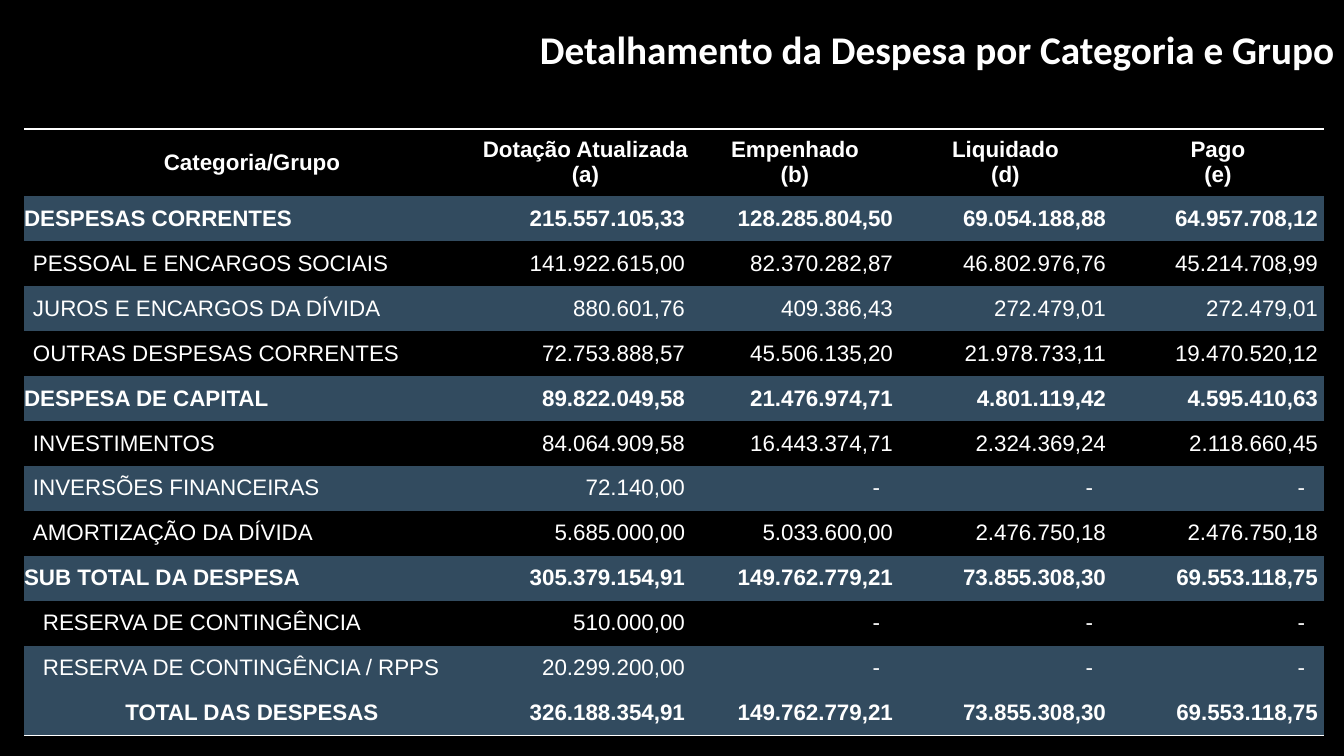
from lxml import etree
from pptx import Presentation
from pptx.dml.color import RGBColor
from pptx.enum.text import MSO_ANCHOR as Anchor, PP_ALIGN as Align
from pptx.oxml.ns import qn
from pptx.util import Pt

PX = 914400 / 100.8
BLACK = RGBColor(0x00, 0x00, 0x00)
WHITE = RGBColor(0xFF, 0xFF, 0xFF)
SLATE = RGBColor(0x32, 0x4B, 0x5F)
NO_GRID_STYLE = "{2D5ABB26-0587-4C30-8999-92F81FD0307C}"

COLUMN_WIDTHS = [456, 211, 208, 213, 212]
HEADER_HEIGHT, ROW_HEIGHT = 67, 45
NUMBER_MARGIN, DASH_MARGIN = 6, 19
HEADERS = ["Categoria/Grupo", "Dotação Atualizada\n(a)", "Empenhado\n(b)",
           "Liquidado\n(d)", "Pago\n(e)"]
# Each row: indent of the label, bold, then the five cells
ROWS = [
    (0, True, "DESPESAS CORRENTES", "215.557.105,33", "128.285.804,50", "69.054.188,88", "64.957.708,12"),
    (9, False, "PESSOAL E ENCARGOS SOCIAIS", "141.922.615,00", "82.370.282,87", "46.802.976,76", "45.214.708,99"),
    (9, False, "JUROS E ENCARGOS DA DÍVIDA", "880.601,76", "409.386,43", "272.479,01", "272.479,01"),
    (9, False, "OUTRAS DESPESAS CORRENTES", "72.753.888,57", "45.506.135,20", "21.978.733,11", "19.470.520,12"),
    (0, True, "DESPESA DE CAPITAL", "89.822.049,58", "21.476.974,71", "4.801.119,42", "4.595.410,63"),
    (9, False, "INVESTIMENTOS", "84.064.909,58", "16.443.374,71", "2.324.369,24", "2.118.660,45"),
    (9, False, "INVERSÕES FINANCEIRAS", "72.140,00", "-", "-", "-"),
    (9, False, "AMORTIZAÇÃO DA DÍVIDA", "5.685.000,00", "5.033.600,00", "2.476.750,18", "2.476.750,18"),
    (0, True, "SUB TOTAL DA DESPESA", "305.379.154,91", "149.762.779,21", "73.855.308,30", "69.553.118,75"),
    (19, False, "RESERVA DE CONTINGÊNCIA", "510.000,00", "-", "-", "-"),
    (19, False, "RESERVA DE CONTINGÊNCIA / RPPS", "20.299.200,00", "-", "-", "-"),
    (0, True, "TOTAL DAS DESPESAS", "326.188.354,91", "149.762.779,21", "73.855.308,30", "69.553.118,75"),
]


def px(length):
    return round(length * PX)


def write(frame, text, align, font_name, size, bold):
    """Fill a text frame with white paragraphs of one format."""
    frame.text = text
    for para in frame.paragraphs:
        para.alignment = align
        for span in para.runs:
            span.font.name = font_name
            span.font.size = Pt(size)
            span.font.bold = bold
            span.font.color.rgb = WHITE


deck = Presentation()
deck.slide_width, deck.slide_height = px(1344), px(756)
page = deck.slides.add_slide(deck.slide_layouts[6])
page.background.fill.solid()
page.background.fill.fore_color.rgb = BLACK

# Expense table
lines = [(0, True, *HEADERS)] + ROWS
last = len(lines) - 1
table_height = HEADER_HEIGHT + ROW_HEIGHT * len(ROWS)
table = page.shapes.add_table(len(lines), len(HEADERS), px(24), px(129),
                              px(sum(COLUMN_WIDTHS)), px(table_height)).table
table.first_row = table.horz_banding = False
table._tbl.tblPr.find(qn("a:tableStyleId")).text = NO_GRID_STYLE
for column, width in zip(table.columns, COLUMN_WIDTHS):
    column.width = px(width)

for r, (indent, bold, *texts) in enumerate(lines):
    table.rows[r].height = px(ROW_HEIGHT if r else HEADER_HEIGHT)
    for c, text in enumerate(texts):
        cell = table.cell(r, c)
        cell.vertical_anchor = Anchor.MIDDLE
        cell.margin_top = cell.margin_bottom = cell.margin_right = 0
        cell.margin_left = 0 if c else px(indent)
        if r == 0 or (r == last and c == 0):
            align = Align.CENTER
        elif c == 0:
            align = Align.LEFT
        else:
            align = Align.RIGHT
            cell.margin_right = px(DASH_MARGIN if text == "-" else NUMBER_MARGIN)
        write(cell.text_frame, text, align, "Arial", 16, bold)

        if r % 2 or r == last:
            cell.fill.solid()
            cell.fill.fore_color.rgb = SLATE
        else:
            cell.fill.background()

        if r in (0, last):
            border = etree.Element(qn("a:lnB" if r else "a:lnT"), w=str(Pt(1)))
            color_fill = etree.SubElement(border, qn("a:solidFill"))
            etree.SubElement(color_fill, qn("a:srgbClr"), val=str(WHITE))
            cell._tc.get_or_add_tcPr().insert(0, border)

# Title
title = page.shapes.add_textbox(px(495), px(20), px(849), px(57))
title.text_frame.word_wrap = True
write(title.text_frame, "Detalhamento da Despesa por Categoria e Grupo",
      Align.RIGHT, "Calibri", 28, True)

deck.save("out.pptx")
